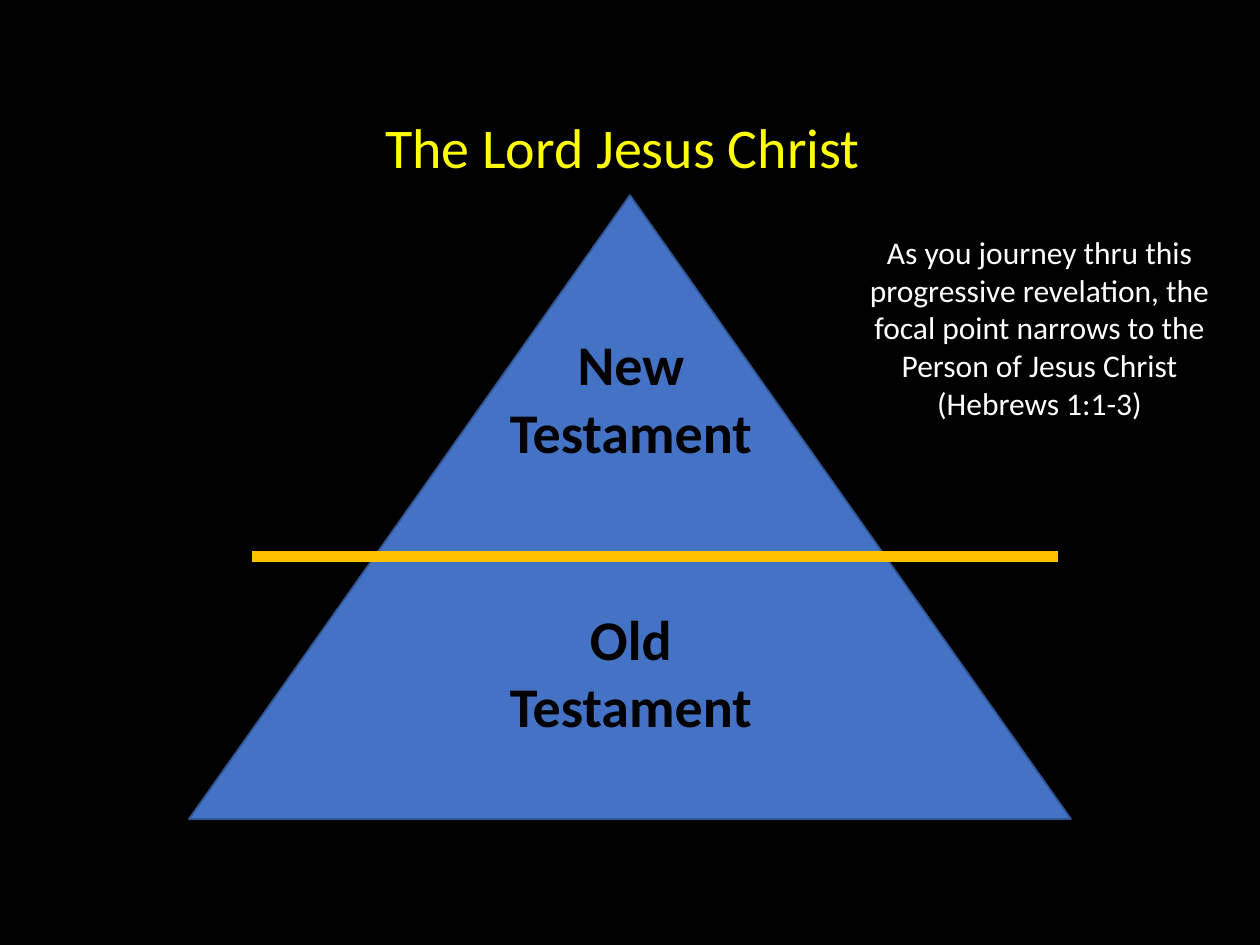
from dataclasses import dataclass

import lxml.etree
import pptx
import pptx.dml.color
import pptx.enum.shapes
import pptx.enum.text
import pptx.oxml.ns
import pptx.slide
import pptx.util

Pt = pptx.util.Pt
RGB = pptx.dml.color.RGBColor
ALIGN = pptx.enum.text.PP_ALIGN
ANCHOR = pptx.enum.text.MSO_ANCHOR


@dataclass(frozen=True)
class Theme:
    font: str = "Calibri"
    background: RGB = RGB(0, 0, 0)
    title: RGB = RGB(255, 255, 0)
    testament: RGB = RGB(0, 0, 0)
    note: RGB = RGB(255, 255, 255)
    pyramid: RGB = RGB(0x44, 0x72, 0xC4)
    pyramid_edge: RGB = RGB(0x32, 0x54, 0x91)
    divider: RGB = RGB(255, 0xC0, 0)
    large: float = 32
    small: float = 18


@dataclass(frozen=True)
class Label:
    lines: tuple[str, ...]
    left: float
    top: float
    width: float
    height: float
    size: float
    color: RGB
    bold: bool = False
    align: ALIGN = ALIGN.CENTER
    anchor: ANCHOR = ANCHOR.TOP
    spacing: float = 1.0


THEME = Theme()


def testament(name: str, top: float) -> Label:
    return Label((name, "Testament"), 246.5, top, 228, 85,
                 THEME.large, THEME.testament, bold=True)


LABELS = (
    Label(("The Lord Jesus Christ",), 213, 41, 294, 90, THEME.large, THEME.title,
          align=ALIGN.LEFT, anchor=ANCHOR.MIDDLE, spacing=0.9),
    testament("Old", 342),
    testament("New", 185),
    Label(("As you journey thru this progressive revelation, the focal point "
           "narrows to the Person of Jesus Christ (Hebrews 1:1-3)",),
          474, 129.5, 240, 116.5, THEME.small, THEME.note),
)


def add_label(s: pptx.slide.Slide, label: Label) -> None:
    sp = s.shapes.add_textbox(Pt(label.left), Pt(label.top),
                              Pt(label.width), Pt(label.height))
    tf = sp.text_frame
    tf.word_wrap = True
    tf.vertical_anchor = label.anchor
    for i, line in enumerate(label.lines):
        p = tf.add_paragraph() if i else tf.paragraphs[0]
        p.alignment = label.align
        p.line_spacing = label.spacing
        r = p.add_run()
        r.text = line
        r.font.name = THEME.font
        r.font.size = Pt(label.size)
        r.font.bold = label.bold
        r.font.color.rgb = label.color


def add_pyramid(s: pptx.slide.Slide) -> None:
    sp = s.shapes.add_shape(pptx.enum.shapes.MSO_SHAPE.ISOSCELES_TRIANGLE,
                            Pt(108), Pt(111.5), Pt(504), Pt(356.5))
    sp.shadow.inherit = False
    sp.fill.solid()
    sp.fill.fore_color.rgb = THEME.pyramid
    sp.line.color.rgb = THEME.pyramid_edge
    sp.line.width = Pt(1)


def add_divider(s: pptx.slide.Slide) -> None:
    sp = s.shapes.add_connector(pptx.enum.shapes.MSO_CONNECTOR.STRAIGHT,
                                Pt(144), Pt(318), Pt(604.8), Pt(318))
    sp.line.color.rgb = THEME.divider
    sp.line.width = Pt(6)
    lxml.etree.SubElement(sp._element.spPr, pptx.oxml.ns.qn("a:effectLst"))


def main() -> None:
    prs = pptx.Presentation()
    prs.slide_width, prs.slide_height = Pt(720), Pt(540)
    s = prs.slides.add_slide(prs.slide_layouts[6])
    s.background.fill.solid()
    s.background.fill.fore_color.rgb = THEME.background
    add_pyramid(s)
    add_divider(s)
    for label in LABELS:
        add_label(s, label)
    prs.save("out.pptx")


if __name__ == "__main__":
    main()
